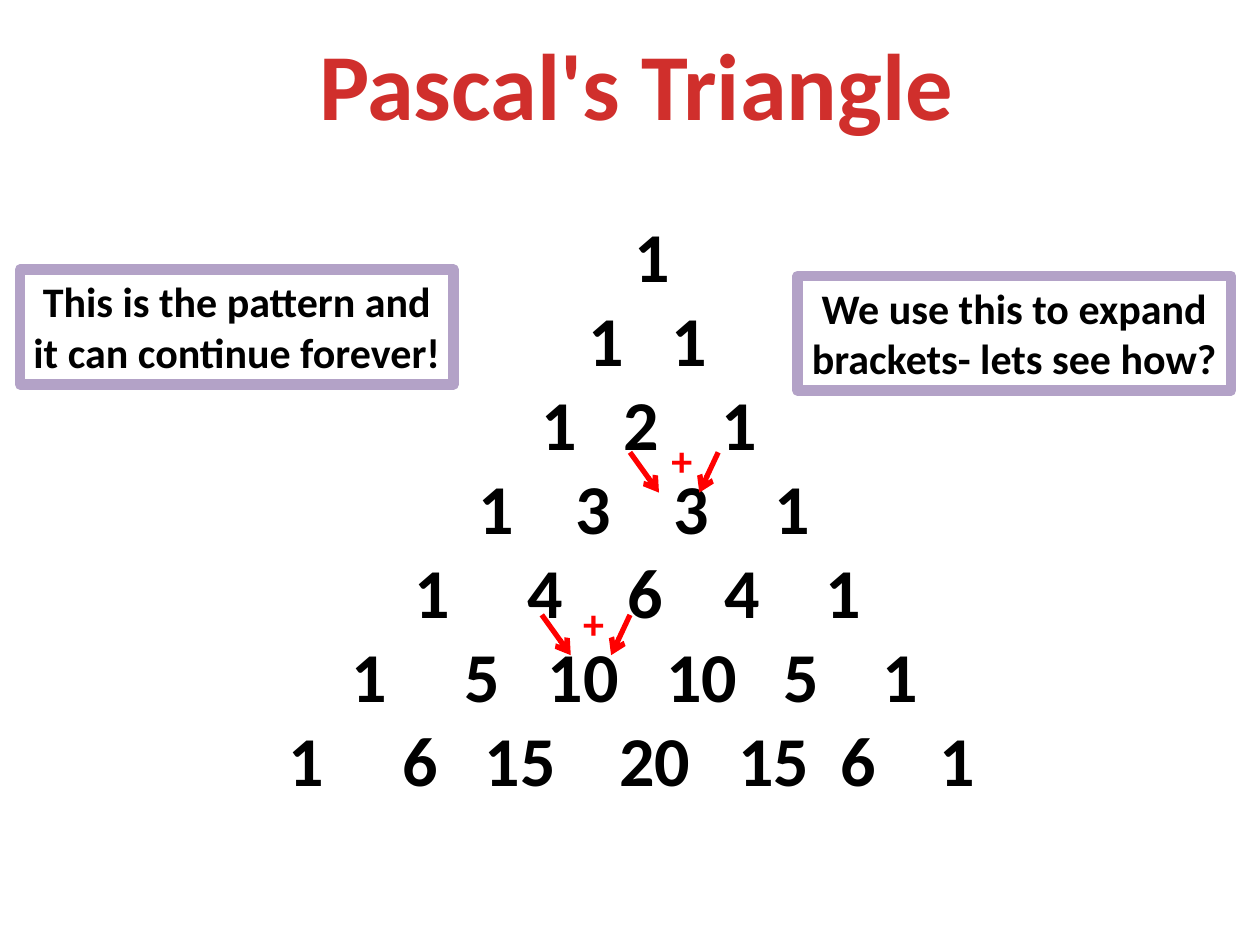
"""Build a slide that shows Pascal's triangle and how its entries add up."""
from math import comb

from lxml.etree import SubElement
from pptx import Presentation
from pptx.dml.color import RGBColor
from pptx.enum.shapes import MSO_CONNECTOR as Connector, MSO_SHAPE as Shape
from pptx.enum.text import MSO_ANCHOR as Anchor, PP_ALIGN as Align
from pptx.oxml.ns import qn
from pptx.util import Inches, Pt

BLACK = RGBColor(0x00, 0x00, 0x00)
RED = RGBColor(0xFF, 0x00, 0x00)
TITLE_RED = RGBColor(0xD0, 0x2F, 0x2C)
LILAC = RGBColor(0xB3, 0xA2, 0xC7)

COLUMNS, ROWS = 10, 7.5
TEXT_INSET = 0.1
TRIANGLE_BOX = (-0.31, 1.64, 8.91, 4.81)
ENTRY_CENTRES = [
    [5.18],
    [4.81, 5.47],
    [4.44, 5.09, 5.87],
    [3.94, 4.71, 5.49, 6.29],
    [3.43, 4.33, 5.12, 5.89, 6.69],
    [2.93, 3.83, 4.63, 5.57, 6.36, 7.15],
    [2.43, 3.34, 4.13, 5.20, 6.14, 6.81, 7.60],
]
CALLOUTS = [
    (0.16, 2.14, "This is the pattern and it can continue forever!"),
    (6.33, 2.19, "We use this to expand brackets- lets see how?"),
]
SUMS = [(5, 3.59), (4.3, 4.88)]


class SlideBuilder:
    """Hold the style and the slide, on a grid of 10 columns and 7.5 rows."""

    font_name = "Calibri"

    def __init__(self, presentation):
        self.cell_width = presentation.slide_width / COLUMNS
        self.cell_height = presentation.slide_height / ROWS
        self.slide = presentation.slides.add_slide(presentation.slide_layouts[5])

    def across(self, columns):
        return round(columns * self.cell_width)

    def down(self, rows):
        return round(rows * self.cell_height)

    def place(self, left, top, width, height):
        return self.across(left), self.down(top), self.across(width), self.down(height)

    def style(self, paragraph, size, color, alignment=Align.LEFT):
        paragraph.alignment = alignment
        font = paragraph.font
        font.name, font.size, font.bold = self.font_name, Pt(size), True
        font.color.rgb = color

    def title(self, text, *box):
        shape = self.slide.shapes.title
        shape.left, shape.top, shape.width, shape.height = self.place(*box)
        shape.text_frame.text = text
        shape.text_frame.vertical_anchor = Anchor.TOP
        self.style(shape.text_frame.paragraphs[0], 54, TITLE_RED, Align.CENTER)

    def text_box(self, *box):
        frame = self.slide.shapes.add_textbox(*self.place(*box)).text_frame
        frame.word_wrap = True
        return frame

    def triangle(self, box, centres_by_row):
        frame = self.text_box(*box)
        frame.text = "\n".join(
            "".join(f"\t{comb(row, entry)}" for entry in range(row + 1))
            for row in range(len(centres_by_row))
        )
        for paragraph, centres in zip(frame.paragraphs, centres_by_row):
            self.style(paragraph, 40, BLACK)
            self.centre_tabs(paragraph, [x - box[0] - TEXT_INSET for x in centres])

    def centre_tabs(self, paragraph, positions):
        properties = paragraph.font._element.getparent()
        tabs = SubElement(properties, qn("a:tabLst"))
        properties.insert(0, tabs)
        for position in positions:
            SubElement(tabs, qn("a:tab"), pos=str(self.across(position)), algn="ctr")

    def arrow(self, start, end):
        connector = self.slide.shapes.add_connector(
            Connector.STRAIGHT,
            self.across(start[0]), self.down(start[1]),
            self.across(end[0]), self.down(end[1]),
        )
        connector.line.color.rgb = RED
        connector.line.width = Pt(3)
        SubElement(connector.line._get_or_add_ln(), qn("a:tailEnd"), type="arrow")
        SubElement(connector._element.spPr, qn("a:effectLst"))

    def sum_mark(self, left, top):
        self.arrow((left, top), (left + 0.23, top + 0.32))
        self.arrow((left + 0.7, top), (left + 0.55, top + 0.32))
        frame = self.text_box(left + 0.23, top - 0.19, 0.31, 0.5)
        frame.text = "+"
        self.style(frame.paragraphs[0], 24, RED)

    def callout(self, left, top, text):
        shape = self.slide.shapes.add_shape(
            Shape.RECTANGLE, *self.place(left, top, 3.44, 0.91)
        )
        shape.shadow.inherit = False
        shape.fill.background()
        shape.line.color.rgb = LILAC
        shape.line.width = Pt(6)
        frame = shape.text_frame
        frame.word_wrap = True
        frame.vertical_anchor = Anchor.TOP
        frame.text = text
        self.style(frame.paragraphs[0], 24, BLACK, Align.CENTER)


def main():
    presentation = Presentation()
    presentation.slide_width, presentation.slide_height = Inches(10), Inches(7.5)
    builder = SlideBuilder(presentation)
    builder.triangle(TRIANGLE_BOX, ENTRY_CENTRES)
    for position in SUMS:
        builder.sum_mark(*position)
    builder.title("Pascal's Triangle", 1.56, 0.16, 6.98, 1.01)
    for callout in CALLOUTS:
        builder.callout(*callout)
    presentation.save("out.pptx")


if __name__ == "__main__":
    main()
